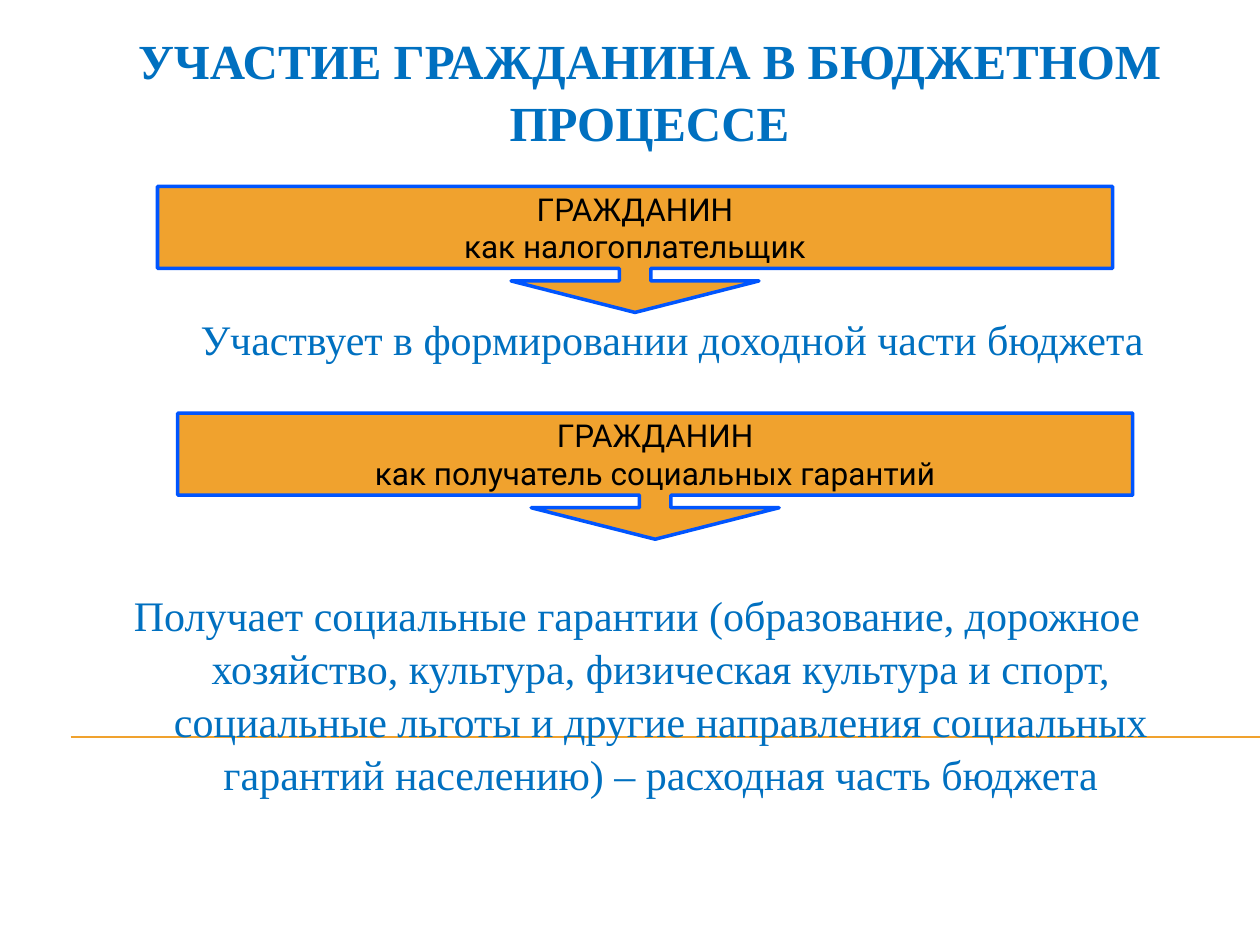
from dataclasses import dataclass

from pptx import Presentation
from pptx.dml.color import RGBColor
from pptx.enum import shapes, text
from pptx.oxml.ns import qn
from pptx.util import Inches, Pt

BLUE = RGBColor(0x00, 0x70, 0xC0)
EDGE = RGBColor(0x00, 0x55, 0xFE)
GOLD = RGBColor(0xF0, 0xA2, 0x2E)
BLACK = RGBColor(0, 0, 0)

TITLE = dict(name="Times New Roman", size=Pt(28), bold=True)
BODY = dict(name="Times New Roman", size=Pt(24))
ROLE = dict(name="Roboto", size=Pt(18))


@dataclass
class Label:
    words: str
    left: float
    top: float
    width: float
    height: float
    font: dict
    anchor: text.MSO_ANCHOR = text.MSO_ANCHOR.TOP
    hang: float = 0.38


@dataclass
class Callout:
    lines: tuple[str, ...]
    left: float
    top: float


LABELS = (
    Label("УЧАСТИЕ ГРАЖДАНИНА В БЮДЖЕТНОМ ПРОЦЕССЕ",
          0.31, 0.23, 9.69, 1.02, TITLE, text.MSO_ANCHOR.BOTTOM, 0),
    Label("Участвует в формировании доходной части бюджета",
          1.02, 2.42, 8.63, 0.78, BODY),
    Label("Получает социальные гарантии (образование, дорожное хозяйство, "
          "культура, физическая культура и спорт, социальные льготы и другие "
          "направления социальных гарантий населению) – расходная часть бюджета",
          0.39, 4.61, 9.33, 1.02, BODY),
)
CALLOUTS = (
    Callout(("ГРАЖДАНИН", "как налогоплательщик"), 1.25, 1.48),
    Callout(("ГРАЖДАНИН", "как получатель социальных гарантий"), 1.41, 3.28),
)


def style(par, form: dict, color: RGBColor) -> None:
    par.alignment = text.PP_ALIGN.CENTER
    for key, value in form.items():
        setattr(par.font, key, value)
    par.font.color.rgb = color


def add_label(slide, item: Label) -> None:
    box = slide.shapes.add_textbox(
        *map(Inches, (item.left, item.top, item.width, item.height)))
    frame = box.text_frame
    frame.word_wrap = True
    frame.vertical_anchor = item.anchor
    par = frame.paragraphs[0]
    par.text = item.words
    par.line_spacing = 1.05
    if item.hang:
        props = par._p.get_or_add_pPr()
        props.set("marL", str(Inches(item.hang)))
        props.set("indent", str(-Inches(item.hang)))
    style(par, item.font, BLUE)


def add_callout(slide, item: Callout) -> None:
    shape = slide.shapes.add_shape(
        shapes.MSO_SHAPE.DOWN_ARROW_CALLOUT,
        *map(Inches, (item.left, item.top, 7.58, 1)))
    for i, value in enumerate((0.25, 0.984, 0.25, 0.65)):
        shape.adjustments[i] = value
    shape.shadow.inherit = False
    shape.fill.solid()
    shape.fill.fore_color.rgb = GOLD
    shape.line.color.rgb = EDGE
    shape.line.width = Pt(2)
    frame = shape.text_frame
    frame.word_wrap = True
    frame.vertical_anchor = text.MSO_ANCHOR.MIDDLE
    frame.text = "\n".join(item.lines)
    for par in frame.paragraphs:
        style(par, ROLE, BLACK)


def add_rule(slide) -> None:
    rule = slide.shapes.add_connector(
        shapes.MSO_CONNECTOR.STRAIGHT, *map(Inches, (0.56, 5.85, 10, 5.85)))
    rule.line.color.rgb = GOLD
    rule.line.width = Pt(0.75)
    props = rule._element.spPr
    props.append(props.makeelement(qn("a:effectLst"), {}))


def main() -> None:
    deck = Presentation()
    deck.slide_width, deck.slide_height = Inches(10), Inches(7.5)
    slide = deck.slides.add_slide(deck.slide_layouts[6])
    add_rule(slide)
    for item in LABELS:
        add_label(slide, item)
    for item in CALLOUTS:
        add_callout(slide, item)
    deck.save("out.pptx")


if __name__ == "__main__":
    main()
